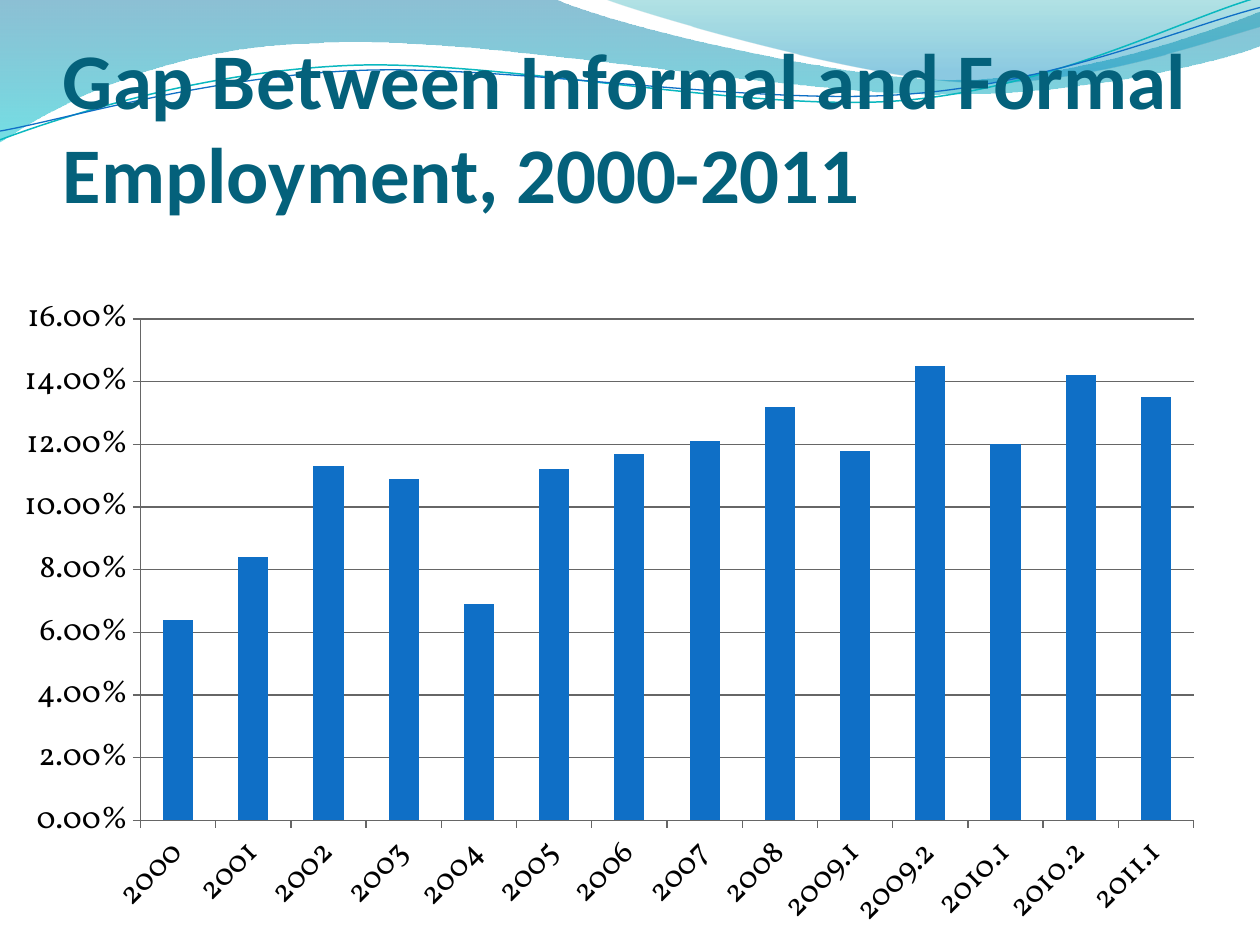
from dataclasses import dataclass
from math import cos, radians, sin
from typing import Optional

from lxml.etree import SubElement
from pptx import Presentation
from pptx.chart.data import CategoryChartData
from pptx.dml.color import RGBColor
from pptx.enum.chart import XL_CHART_TYPE, XL_TICK_MARK
from pptx.enum.text import MSO_ANCHOR, MSO_AUTO_SIZE
from pptx.oxml.ns import qn
from pptx.util import Pt

COLORS = {
    "title": "04617B", "bar": "0F6FC6", "axis": "666666", "text": "000000",
    "teal_line": "0AB8BF", "deep_blue": "0074A1", "aqua": "00C6CF",
    "sea_green": "00A1A9", "sky_blue": "008BBF",
}
LINE_TILT = -2.7

Point = tuple[float, float]


@dataclass
class Stop:
    position: float
    color: str
    opacity: int


@dataclass
class Wave:
    """Outline in points: 2 numbers are a straight step, 6 a Bezier curve."""
    start: Point
    steps: list[tuple[float, ...]]
    gradient: Optional[list[Stop]] = None
    line_color: str = ""
    line_width: float = 0
    pivot: Point = (0, 0)


BANDS = [
    # Broad band across the top
    Wave((0, 0), [
        (316.8, -0.7), (342.7, 12.2, 478, 45.4, 546, 45.4),
        (614, 45.4, 690, 18.7, 720, 6.5), (720.7, 25.9),
        (707.8, 31.7, 626.4, 54.7, 537, 54), (447.8, 54, 275, 20.2, 185, 24.5),
        (92.9, 25.9, 33, 59.8, -0.7, 81.4), (0, 0)],
        [Stop(0, "deep_blue", 45), Stop(1, "aqua", 55)]),
    # Lighter band at the right
    Wave((344.9, -0.7), [
        (366.5, 7.9, 491, 44.6, 553.7, 46.8), (616.3, 49.7, 692, 23, 720, 15.1),
        (720, 0), (344.9, -0.7)],
        [Stop(0, "sea_green", 30), Stop(0.8, "sky_blue", 45)]),
]

# Thin lines, tilted around their pivots
LINES = [
    Wave((0, 79.9), [
        (34.6, 67, 113.8, 41, 199.4, 37.4), (284.4, 33.8, 427, 64.1, 513.4, 57.6),
        (599.8, 51.1, 675.4, 10.8, 718.6, -1.4)],
        line_color="teal_line", line_width=0.85, pivot=(359.3, 41.4)),
    Wave((0, 74.9), [
        (33.8, 69.1, 118, 43.9, 203.8, 40.3), (290.2, 36.7, 429.8, 60.5, 516.2, 54),
        (601.9, 48.2, 677.5, 15.1, 720, 4.3)],
        line_color="bar", line_width=0.75, pivot=(359.6, 42.5)),
]

GAPS = {
    "2000": 0.064, "2001": 0.084, "2002": 0.113, "2003": 0.109, "2004": 0.069,
    "2005": 0.112, "2006": 0.117, "2007": 0.121, "2008": 0.132,
    "2009.1": 0.118, "2009.2": 0.145, "2010.1": 0.12, "2010.2": 0.142,
    "2011.1": 0.135,
}


def rgb(name: str) -> RGBColor:
    return RGBColor.from_string(COLORS[name])


def level(point: Point, pivot: Point) -> Point:
    """Undo the tilt of a point, as the shape itself is rotated."""
    angle = radians(-LINE_TILT)
    x, y = point[0] - pivot[0], point[1] - pivot[1]
    return (pivot[0] + x * cos(angle) - y * sin(angle),
            pivot[1] + x * sin(angle) + y * cos(angle))


def draw_outline(shapes, wave: Wave):
    """Draw the control points, then join each three of a curve."""
    points = [wave.start]
    for step in wave.steps:
        points += zip(step[::2], step[1::2])
    if not wave.gradient:
        points = [level(point, wave.pivot) for point in points]
    points = [(Pt(x), Pt(y)) for x, y in points]
    builder = shapes.build_freeform(*points[0], scale=1.0)
    builder.add_line_segments(points[1:], close=bool(wave.gradient))
    shape = builder.convert_to_shape()
    segments = iter(list(shape.element.spPr.iter(qn("a:lnTo"))))
    for step in wave.steps:
        segment = next(segments)
        if len(step) == 6:
            segment.tag = qn("a:cubicBezTo")
            for _ in range(2):
                extra = next(segments)
                segment.append(extra[0])
                extra.getparent().remove(extra)
    return shape


def draw_wave(shapes, wave: Wave) -> None:
    shape = draw_outline(shapes, wave)
    shape.shadow.inherit = False
    if not wave.gradient:
        shape.rotation = LINE_TILT
        shape.fill.background()
        shape.line.color.rgb = rgb(wave.line_color)
        shape.line.width = Pt(wave.line_width)
        return
    shape.line.fill.background()
    shape.fill.gradient()
    shape.fill.gradient_angle = 270
    for target, stop in zip(shape.fill.gradient_stops, wave.gradient):
        target.position = stop.position
        target.color.rgb = rgb(stop.color)
    # Opacity of the gradient stops
    colors = list(shape.element.spPr.iter(qn("a:srgbClr")))
    for color, stop in zip(colors, wave.gradient):
        SubElement(color, qn("a:alpha")).set("val", str(stop.opacity * 1000))


def draw_title(page) -> None:
    box = page.shapes.add_textbox(Pt(36), Pt(90), Pt(648), Pt(90))
    frame = box.text_frame
    frame.word_wrap = True
    frame.auto_size = MSO_AUTO_SIZE.NONE
    frame.vertical_anchor = MSO_ANCHOR.BOTTOM
    frame.margin_left = frame.margin_right = 0
    frame.margin_top, frame.margin_bottom = Pt(3.6), Pt(54.5)
    para = frame.paragraphs[0]
    para.text = "Gap Between Informal and Formal Employment, 2000-2011"
    para.font.name, para.font.size, para.font.bold = "Calibri", Pt(45), True
    para.font.color.rgb = rgb("title")


def draw_chart(page) -> None:
    data = CategoryChartData(number_format="0.00%")
    data.categories = list(GAPS)
    data.add_series("Series 1", list(GAPS.values()))
    chart = page.shapes.add_chart(
        XL_CHART_TYPE.COLUMN_CLUSTERED, Pt(0), Pt(162), Pt(696), Pt(378), data).chart
    chart.has_legend = chart.has_title = False
    chart.font.name, chart.font.size = "Vollkorn", Pt(18)
    chart.font.color.rgb = rgb("text")

    # Columns
    plot = chart.plots[0]
    plot.gap_width = 150
    plot.vary_by_categories = False
    fill = plot.series[0].format.fill
    fill.solid()
    fill.fore_color.rgb = rgb("bar")

    # Axes
    values, years = chart.value_axis, chart.category_axis
    values.minimum_scale, values.maximum_scale, values.major_unit = 0, 0.16, 0.02
    values.has_major_gridlines = True
    values.tick_labels.number_format = "0.00%"
    values.tick_labels.number_format_is_linked = False
    for part in (values, years, values.major_gridlines):
        part.format.line.color.rgb = rgb("axis")
        part.format.line.width = Pt(0.75)
    for axis in (values, years):
        axis.major_tick_mark = XL_TICK_MARK.OUTSIDE
        axis.tick_labels.font.size = Pt(18)
        axis.tick_labels.font.name = "Vollkorn"
        axis.tick_labels.font.color.rgb = rgb("text")
    # Slanted year labels
    years._element.find(qn("c:txPr")).find(qn("a:bodyPr")).set("rot", "-2700000")


def main() -> None:
    deck = Presentation()
    deck.slide_width, deck.slide_height = Pt(720), Pt(540)
    page = deck.slides.add_slide(deck.slide_layouts[6])
    for band in BANDS:
        draw_wave(page.shapes, band)
    line_group = page.shapes.add_group_shape()
    for line in LINES:
        draw_wave(line_group.shapes, line)
    draw_title(page)
    draw_chart(page)
    deck.save("out.pptx")


if __name__ == "__main__":
    main()
